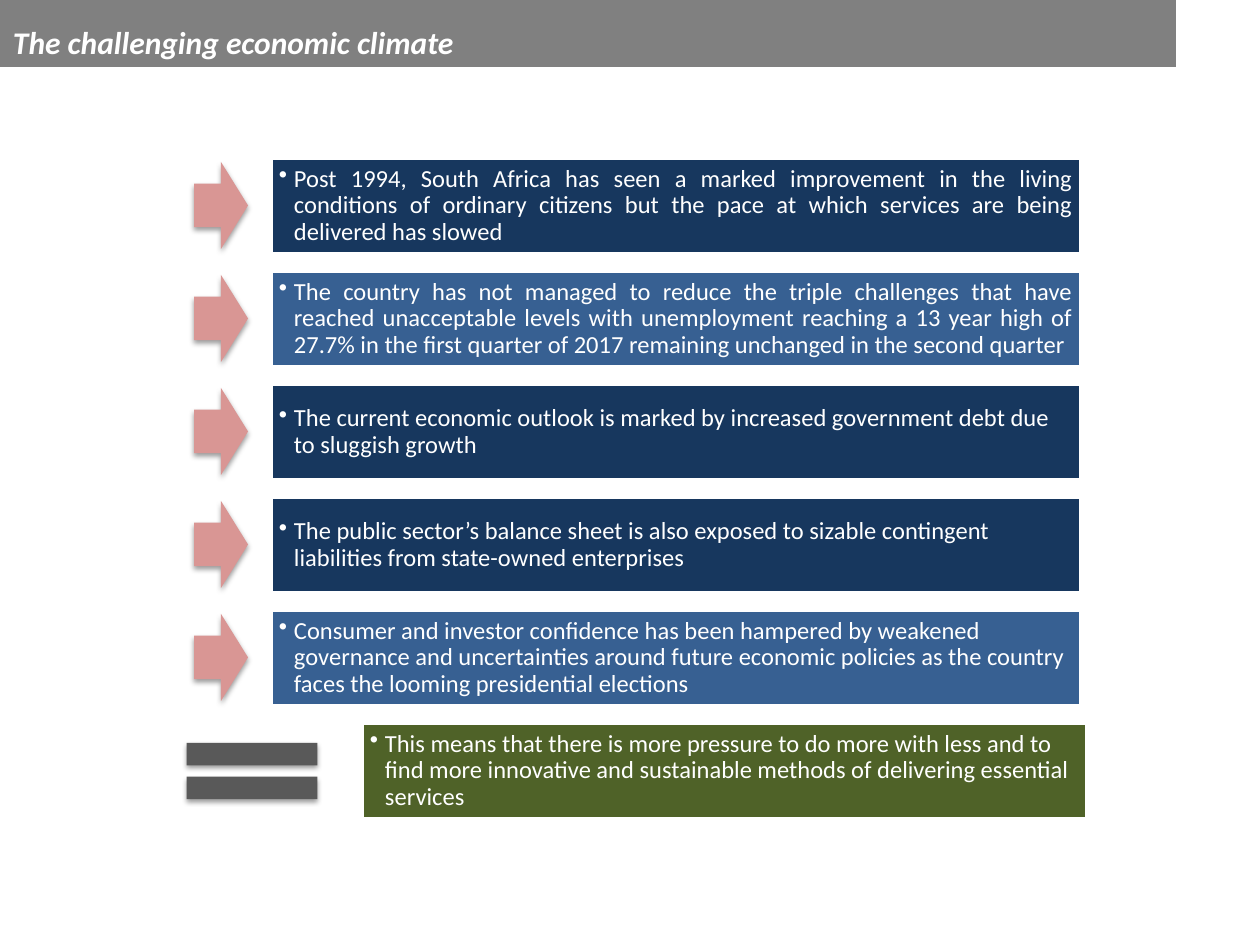
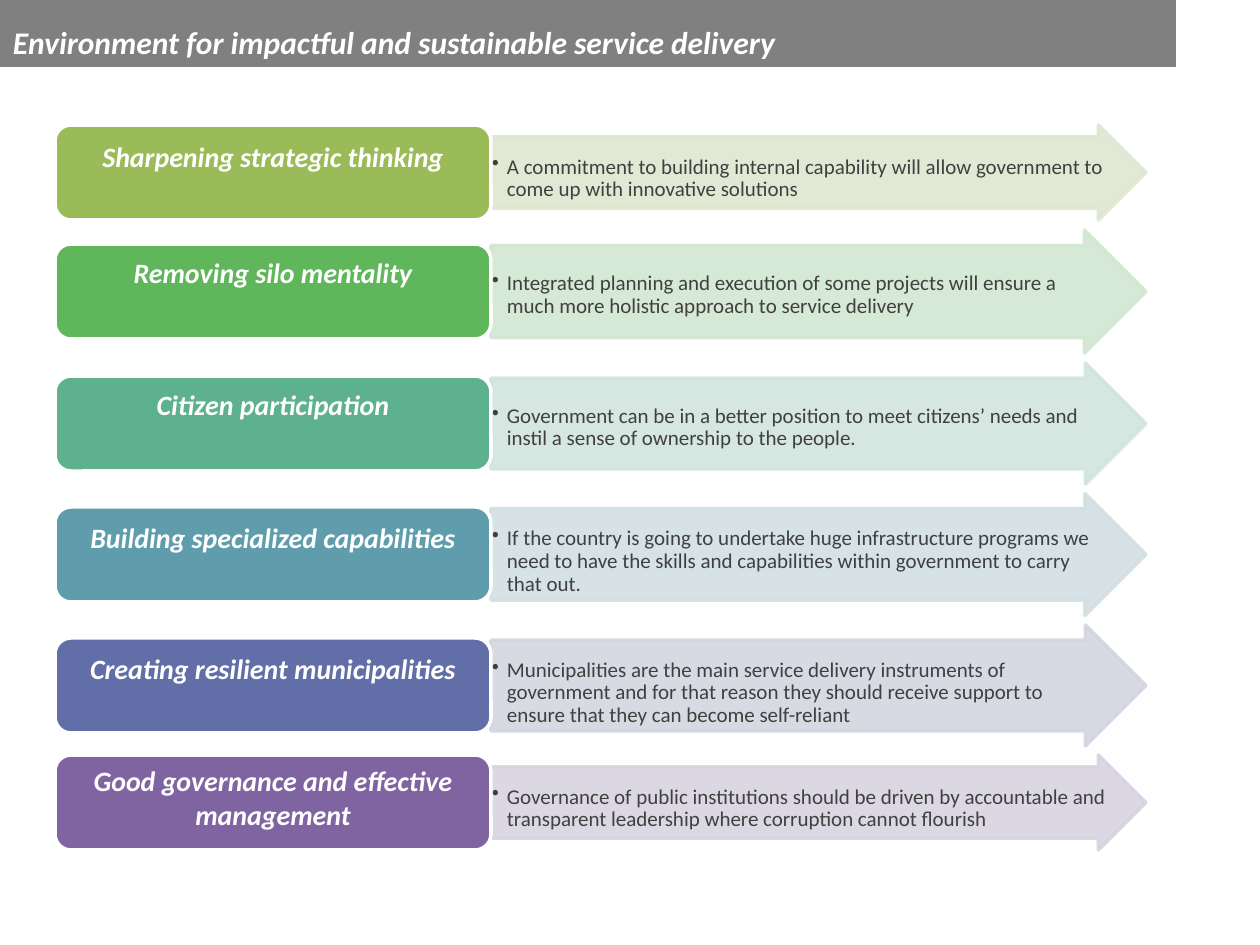
from lxml import etree
from pptx import Presentation
from pptx import util as u
from pptx.dml.color import RGBColor
from pptx.enum import shapes, text
from pptx.oxml.ns import qn

PX_PER_INCH = 126
FONT = "Calibri"
WHITE, GREY, DARK_GREY = "FFFFFF", "808080", "595959"
NAVY, BLUE, GREEN, PINK = "17375E", "376092", "4F6228", "D99694"
BODY_TEXT = "404040"
LEFT, CENTER, JUSTIFY = (text.PP_ALIGN.LEFT, text.PP_ALIGN.CENTER,
                         text.PP_ALIGN.JUSTIFY)
TOP, MIDDLE, BOTTOM = (text.MSO_ANCHOR.TOP, text.MSO_ANCHOR.MIDDLE,
                       text.MSO_ANCHOR.BOTTOM)
SHAPE = shapes.MSO_SHAPE


def px(length):
    return u.Inches(length / PX_PER_INCH)


def color(hex_code):
    return RGBColor.from_string(hex_code)


class Deck:
    """Holds the shared style and the slide being filled."""

    def __init__(self):
        self.prs = Presentation()
        self.prs.slide_width, self.prs.slide_height = px(1260), px(945)
        self.slide = None

    def new_slide(self, title):
        self.slide = self.prs.slides.add_slide(self.prs.slide_layouts[6])
        band = self.box(SHAPE.RECTANGLE, 0, 0, 1176, 67, GREY)
        self.set_text(band, title, 18, anchor=BOTTOM, insets=(13, 6, 13, 6),
                      heading=True)

    def box(self, kind, left, top, width, height, fill, line=None):
        shape = self.slide.shapes.add_shape(
            kind, px(left), px(top), px(width), px(height))
        shape.shadow.inherit = False
        shape.fill.solid()
        shape.fill.fore_color.rgb = color(fill)
        if line:
            shape.line.color.rgb = color(line)
            shape.line.width = u.Pt(2)
        else:
            shape.line.fill.background()
        return shape

    def set_text(self, shape, words, size, font_color=WHITE, align=LEFT,
                 anchor=MIDDLE, insets=(8, 8, 8, 8), heading=False,
                 bullet=False):
        frame = shape.text_frame
        frame.word_wrap = True
        frame.vertical_anchor = anchor
        (frame.margin_left, frame.margin_top,
         frame.margin_right, frame.margin_bottom) = map(px, insets)
        paragraph = frame.paragraphs[0]
        paragraph.text = words
        paragraph.alignment = align
        if bullet:
            paragraph.line_spacing = 0.9
            props = paragraph._p.get_or_add_pPr()
            props.set("marL", str(px(15)))
            props.set("indent", str(-px(15)))
            etree.SubElement(props, qn("a:buChar"), char="•")
        font = paragraph.font
        font.name, font.size = FONT, u.Pt(size)
        font.bold = font.italic = heading
        font.color.rgb = color(font_color)

    def add_shadow(self, shape):
        effects = shape._element.spPr.find(qn("a:effectLst"))
        shadow = etree.SubElement(
            effects, qn("a:outerShdw"), blurRad=str(u.Pt(3.1)),
            dist=str(u.Pt(1.6)), dir="5400000", rotWithShape="0")
        black = etree.SubElement(shadow, qn("a:srgbClr"), val="000000")
        etree.SubElement(black, qn("a:alpha"), val="38000")

    def make_translucent(self, shape, percent):
        for tint in shape._element.spPr.iter(qn("a:srgbClr")):
            etree.SubElement(tint, qn("a:alpha"), val=str(percent * 1000))

    def marker(self, kind, left, top, width, height, fill):
        self.add_shadow(self.box(kind, left, top, width, height, fill))

    def statement(self, left, top, width, fill, words, align=LEFT):
        panel = self.box(SHAPE.RECTANGLE, left, top, width, 96, fill, WHITE)
        self.set_text(panel, words, 14, align=align, bullet=True)

    def theme_row(self, top, fill, heading, heading_inset,
                  tint, arrow_height, words, words_inset):
        label_height = 95
        arrow_top = top + (label_height - arrow_height) / 2
        arrow = self.box(SHAPE.RIGHT_ARROW, 491, arrow_top, 655,
                         arrow_height, tint, tint)
        arrow.adjustments[0] = 0.75
        self.make_translucent(arrow, 90)
        self.set_text(arrow, words, 12, BODY_TEXT, anchor=TOP,
                      insets=(1, words_inset, 1, 1), bullet=True)
        label = self.box(SHAPE.ROUNDED_RECTANGLE, 55, top, 436,
                         label_height, fill, WHITE)
        self.set_text(label, heading, 16, align=CENTER, anchor=TOP,
                      insets=(9, heading_inset, 9, 4), heading=True)


def economic_climate(deck):
    deck.new_slide("The challenging economic climate")
    first_top, pitch = 158, 113
    challenges = [
        (NAVY, JUSTIFY, "Post 1994, South Africa has seen a marked improvement "
         "in the living conditions of ordinary citizens but the pace at which "
         "services are being delivered has slowed"),
        (BLUE, JUSTIFY, "The country has not managed to reduce the triple "
         "challenges that have reached unacceptable levels with unemployment "
         "reaching a 13 year high of 27.7% in the first quarter of 2017 "
         "remaining unchanged in the second quarter"),
        (NAVY, LEFT, "The current economic outlook is marked by increased "
         "government debt due to sluggish growth"),
        (NAVY, LEFT, "The public sector’s balance sheet is also exposed to "
         "sizable contingent liabilities from state-owned enterprises"),
        (BLUE, LEFT, "Consumer and investor confidence has been hampered by "
         "weakened governance and uncertainties around future economic "
         "policies as the country faces the looming presidential elections"),
    ]
    # Challenges
    for row, (fill, align, words) in enumerate(challenges):
        top = first_top + row * pitch
        deck.marker(SHAPE.RIGHT_ARROW, 194, top + 4, 54, 87, PINK)
        deck.statement(271, top, 810, fill, words, align)
    # Conclusion
    top = first_top + len(challenges) * pitch
    deck.marker(SHAPE.MATH_EQUAL, 163, top, 178, 96, DARK_GREY)
    deck.statement(362, top, 725, GREEN,
                   "This means that there is more pressure to do more with less "
                   "and to find more innovative and sustainable methods of "
                   "delivering essential services")


def service_delivery(deck):
    deck.new_slide("Environment for impactful and sustainable service delivery")
    # Top, label fill, heading and inset, arrow tint, height, words and inset
    themes = [
        (125, "9BBB59", "Sharpening strategic thinking", 10, "DEE7D1", 95,
         "A commitment to building internal capability will allow government "
         "to come up with innovative solutions", 19),
        (244, "5FB65B", "Removing silo mentality", 7, "D2E6D2", 123,
         "Integrated planning and execution of some projects will ensure a "
         "much more holistic approach to service delivery", 27),
        (376, "5DB18E", "Citizen participation", 7, "D2E4DD", 121,
         "Government can be in a better position to meet citizens’ needs and "
         "instil a sense of ownership to the people.", 27),
        (507, "5F9DAC", "Building specialized capabilities", 9, "D2DFE3", 122,
         "If the country is going to undertake huge infrastructure programs "
         "we need to have the skills and capabilities within government to "
         "carry that out.", 19),
        (638, "626EA7", "Creating resilient municipalities", 9, "D3D6E1", 121,
         "Municipalities are the main service delivery instruments of "
         "government and for that reason they should receive support to "
         "ensure that they can become self-reliant", 19),
        (755, "8064A2", "Good governance and effective management", 4,
         "D8D3E0", 95,
         "Governance of public institutions should be driven by accountable "
         "and transparent leadership where corruption cannot flourish", 19),
    ]
    for theme in themes:
        deck.theme_row(*theme)


def main():
    deck = Deck()
    economic_climate(deck)
    service_delivery(deck)
    deck.prs.save("out.pptx")


if __name__ == "__main__":
    main()
